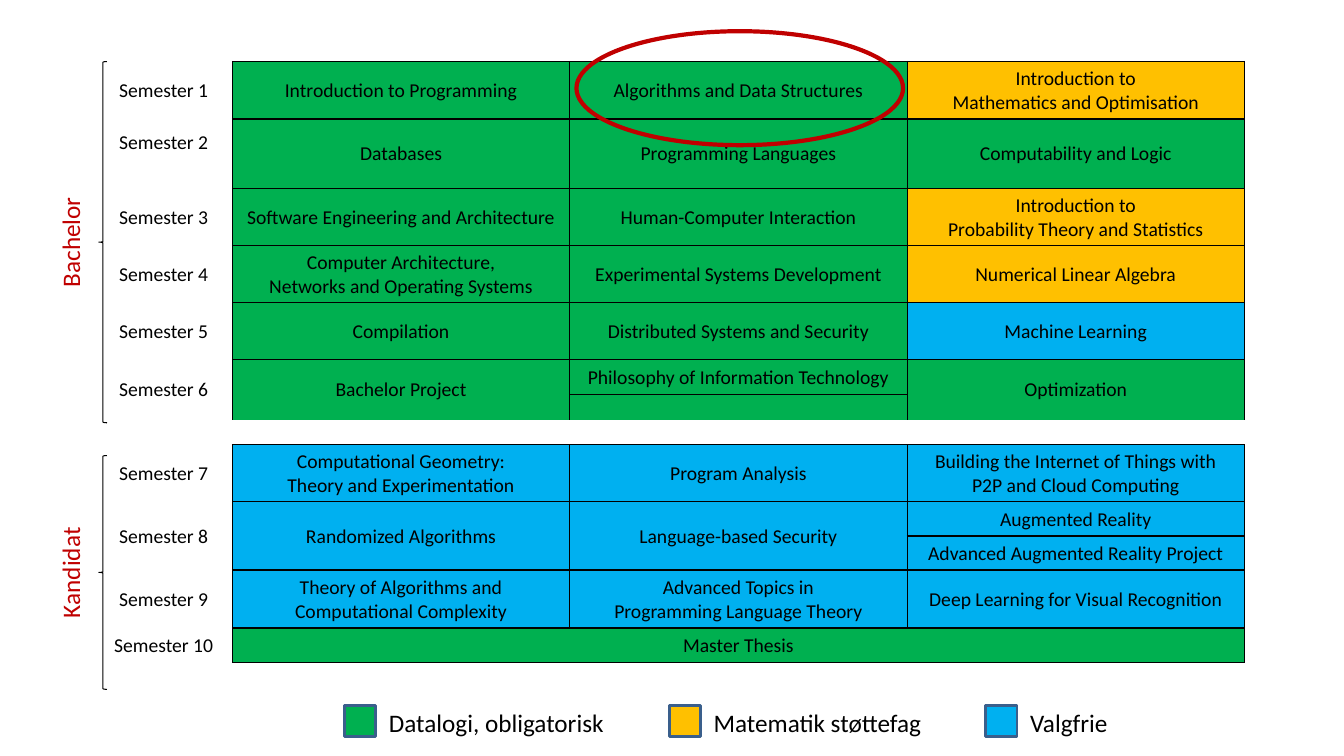
from lxml import etree
from pptx import Presentation
from pptx.dml.color import RGBColor
from pptx.enum.shapes import MSO_SHAPE
from pptx.enum.text import MSO_ANCHOR, PP_ALIGN
from pptx.oxml.ns import qn
from pptx.util import Pt

CENTER, LEFT = PP_ALIGN.CENTER, PP_ALIGN.LEFT
MIDDLE = MSO_ANCHOR.MIDDLE
BRACE, RECTANGLE, OVAL = MSO_SHAPE.LEFT_BRACE, MSO_SHAPE.RECTANGLE, MSO_SHAPE.OVAL

BLACK = RGBColor(0x00, 0x00, 0x00)
RED = RGBColor(0xC0, 0x00, 0x00)
GREEN = RGBColor(0x00, 0xB0, 0x50)
YELLOW = RGBColor(0xFF, 0xC0, 0x00)
BLUE = RGBColor(0x00, 0xB0, 0xF0)
SWATCH_LINE = RGBColor(0x3A, 0x5F, 0x8C)

NO_GRID_STYLE = "{2D5ABB26-0587-4C30-8999-92F81FD0307C}"
COLUMN_WIDTHS = [98.2, 241, 241, 241]

# Row height, semester, then one (colour, course) pair per column
PLAN = [
    (41, "Semester 1", [(GREEN, "Introduction to Programming"),
                        (GREEN, "Algorithms and Data Structures"),
                        (YELLOW, "Introduction to\nMathematics and Optimisation")]),
    (49.7, "Semester 2", [(GREEN, "Databases"),
                          (GREEN, "Programming Languages"),
                          (GREEN, "Computability and Logic")]),
    (40.7, "Semester 3", [(GREEN, "Software Engineering and Architecture"),
                          (GREEN, "Human-Computer Interaction"),
                          (YELLOW, "Introduction to\nProbability Theory and Statistics")]),
    (40.7, "Semester 4", [(GREEN, "Computer Architecture,\nNetworks and Operating Systems"),
                          (GREEN, "Experimental Systems Development"),
                          (YELLOW, "Numerical Linear Algebra")]),
    (40.7, "Semester 5", [(GREEN, "Compilation"),
                          (GREEN, "Distributed Systems and Security"),
                          (BLUE, "Machine Learning")]),
    (25, "Semester 6", [(GREEN, "Bachelor Project"),
                        (GREEN, "Philosophy of Information Technology"),
                        (GREEN, "Optimization")]),
    (18.2, "", [(GREEN, "")] * 3),
    (17.8, "", [(None, "")] * 3),
    (40.8, "Semester 7", [(BLUE, "Computational Geometry:\nTheory and Experimentation"),
                          (BLUE, "Program Analysis"),
                          (BLUE, "Building the Internet of Things with\nP2P and Cloud Computing")]),
    (24.4, "Semester 8", [(BLUE, "Randomized Algorithms"),
                          (BLUE, "Language-based Security"),
                          (BLUE, "Augmented Reality")]),
    (24.4, "", [(BLUE, ""), (BLUE, ""), (BLUE, "Advanced Augmented Reality Project")]),
    (41.4, "Semester 9", [(BLUE, "Theory of Algorithms and Computational Complexity"),
                          (BLUE, "Advanced Topics in\nProgramming Language Theory"),
                          (BLUE, "Deep Learning for Visual Recognition")]),
    (24.4, "Semester 10", [(GREEN, "Master Thesis"), (GREEN, ""), (GREEN, "")]),
]
GAP_ROW = 7
# First row, first column, last row, last column
MERGES = ([(5, column, 6, column) for column in (0, 1, 3)]
          + [(GAP_ROW, 0, GAP_ROW, 3)]
          + [(9, column, 10, column) for column in (0, 1, 2)]
          + [(12, 1, 12, 3)])


class PlanSlide:
    def __init__(self, slide, font="Calibri"):
        self.slide = slide
        self.font = font

    def add_lines(self, text_frame, text, size, color, align):
        paragraph = text_frame.paragraphs[0]
        paragraph.alignment = align
        for index, line in enumerate(text.split("\n")):
            if index:
                paragraph.add_line_break()
            run = paragraph.add_run()
            run.text = line
            run.font.name = self.font
            run.font.size = Pt(size)
            run.font.color.rgb = color

    def shape(self, kind, left, top, width, height, line, weight, fill=None):
        shape = self.slide.shapes.add_shape(kind, Pt(left), Pt(top), Pt(width), Pt(height))
        shape.shadow.inherit = False
        shape.line.color.rgb = line
        shape.line.width = Pt(weight)
        if fill is None:
            shape.fill.background()
        else:
            shape.fill.solid()
            shape.fill.fore_color.rgb = fill

    def text(self, text, left, top, width, height, color=BLACK, align=LEFT, rotation=0):
        box = self.slide.shapes.add_textbox(Pt(left), Pt(top), Pt(width), Pt(height))
        box.rotation = rotation
        box.text_frame.word_wrap = bool(rotation)
        self.add_lines(box.text_frame, text, 18, color, align)

    def borders(self, cell, sides):
        """Draw thin black lines on the given sides (letters of LRTB) and clear the rest."""
        properties = cell._tc.get_or_add_tcPr()
        for index, side in enumerate("LRTB"):
            line = etree.Element(qn(f"a:ln{side}"), w=str(Pt(1)))
            if side in sides:
                fill = etree.SubElement(line, qn("a:solidFill"))
                etree.SubElement(fill, qn("a:srgbClr"), val=str(BLACK))
            else:
                etree.SubElement(line, qn("a:noFill"))
            properties.insert(index, line)

    def cell(self, cell, text, fill, sides):
        cell.vertical_anchor = MIDDLE
        cell.margin_left = cell.margin_right = Pt(9.4)
        cell.margin_top, cell.margin_bottom = Pt(0.7), Pt(0)
        if fill is None:
            cell.fill.background()
        else:
            cell.fill.solid()
            cell.fill.fore_color.rgb = fill
        self.borders(cell, sides)
        if text:
            self.add_lines(cell.text_frame, text, 14, BLACK, CENTER)
        else:
            paragraph = cell.text_frame.paragraphs[0]
            etree.SubElement(paragraph._p, qn("a:endParaRPr"), sz="1000")

    def plan_table(self, left, top):
        heights = [height for height, _, _ in PLAN]
        frame = self.slide.shapes.add_table(
            len(PLAN), len(COLUMN_WIDTHS), Pt(left), Pt(top),
            Pt(sum(COLUMN_WIDTHS)), Pt(sum(heights)))
        table = frame.table
        table.first_row = table.horz_banding = False
        table._tbl.tblPr.find(qn("a:tableStyleId")).text = NO_GRID_STYLE
        for column, width in zip(table.columns, COLUMN_WIDTHS):
            column.width = Pt(width)
        for index, (height, semester, courses) in enumerate(PLAN):
            table.rows[index].height = Pt(height)
            label_sides = "" if index == GAP_ROW else "R"
            self.cell(table.cell(index, 0), semester, None, label_sides)
            for column, (color, course) in enumerate(courses, 1):
                sides = "" if color is None else "LRT" if index + 1 == GAP_ROW else "LRTB"
                self.cell(table.cell(index, column), course, color, sides)
        # Semester 2 sits one half line above the middle of its row
        table.cell(1, 0).margin_bottom = Pt(17)
        for first_row, first_column, last_row, last_column in MERGES:
            table.cell(first_row, first_column).merge(table.cell(last_row, last_column))


def main():
    presentation = Presentation()
    presentation.slide_width, presentation.slide_height = Pt(960), Pt(540)
    plan = PlanSlide(presentation.slides.add_slide(presentation.slide_layouts[6]))

    plan.plan_table(67.8, 44)
    for degree, brace_top, brace_height, text_top in [
            ("Bachelor", 44, 258, 158.5), ("Kandidat", 325.4, 167, 394.6)]:
        plan.shape(BRACE, 70.6, brace_top, 5.8, brace_height, BLACK, 0.75)
        plan.text(degree, -19.4, text_top, 139, 29, RED, CENTER, 270)
    for label, color, left, width in [
            ("Datalogi, obligatorisk", GREEN, 246.2, 173.5),
            ("Matematik støttefag", YELLOW, 478.1, 165),
            ("Valgfrie", BLUE, 704.2, 70.6)]:
        plan.shape(RECTANGLE, left, 504, 22.3, 22.3, SWATCH_LINE, 2, color)
        plan.text(label, left + 24.5, 501.6, width, 29)
    plan.shape(OVAL, 411.8, 22.3, 233.3, 81.4, RED, 3)

    presentation.save("out.pptx")


if __name__ == "__main__":
    main()
